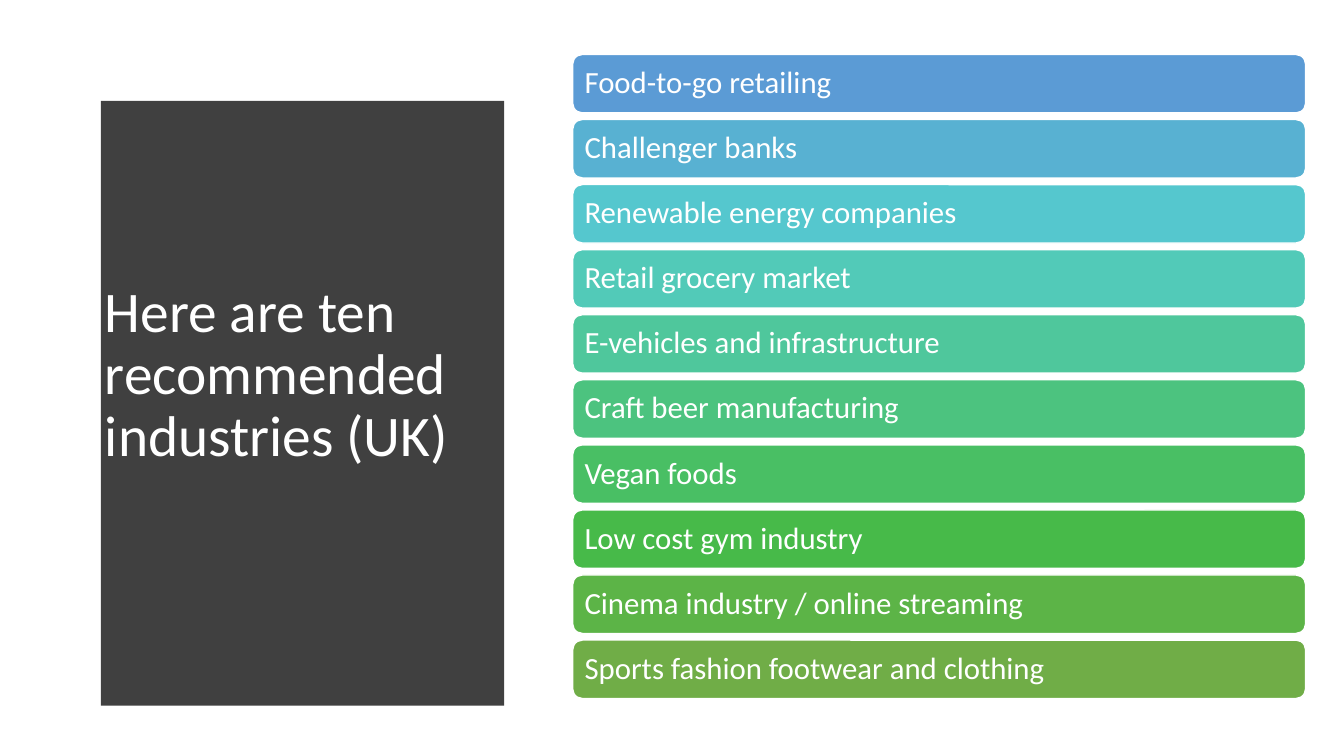
from pptx import Presentation
from pptx.dml.color import RGBColor
from pptx.enum.shapes import MSO_SHAPE
from pptx.enum.text import MSO_ANCHOR, MSO_AUTO_SIZE, PP_ALIGN
from pptx.util import Inches, Pt

FONT = "Calibri"
WHITE = RGBColor(0xFF, 0xFF, 0xFF)
CHARCOAL = RGBColor(0x40, 0x40, 0x40)

INDUSTRIES = [
    ("Food-to-go retailing", RGBColor(0x5B, 0x9B, 0xD5)),
    ("Challenger banks", RGBColor(0x58, 0xB1, 0xD2)),
    ("Renewable energy companies", RGBColor(0x55, 0xC7, 0xCE)),
    ("Retail grocery market", RGBColor(0x52, 0xCA, 0xB8)),
    ("E-vehicles and infrastructure", RGBColor(0x4F, 0xC7, 0x9C)),
    ("Craft beer manufacturing", RGBColor(0x4C, 0xC3, 0x7F)),
    ("Vegan foods", RGBColor(0x49, 0xBF, 0x64)),
    ("Low cost gym industry", RGBColor(0x47, 0xBA, 0x49)),
    ("Cinema industry / online streaming", RGBColor(0x5C, 0xB4, 0x47)),
    ("Sports fashion footwear and clothing", RGBColor(0x70, 0xAD, 0x47)),
]


def format_text(tf, text, size):
    """Left-aligned white text, centred vertically."""
    tf.text = text
    tf.word_wrap = True
    tf.auto_size = MSO_AUTO_SIZE.NONE
    tf.vertical_anchor = MSO_ANCHOR.MIDDLE
    p = tf.paragraphs[0]
    p.alignment = PP_ALIGN.LEFT
    p.line_spacing = 0.9
    font = p.runs[0].font
    font.name, font.size, font.color.rgb = FONT, Pt(size), WHITE


def add_title_panel(slide, left, top, width, height):
    """Dark panel with a bulging right edge, and the title on it."""
    bulge, steps = 0.24, 40
    edge = left + width - bulge
    # The right edge is a parabola, widest at mid-height
    curve = [(edge + bulge * 4 * t * (1 - t), top + height * t)
             for t in (i / steps for i in range(steps + 1))]
    builder = slide.shapes.build_freeform(left, top, scale=Inches(1))
    builder.add_line_segments(curve + [(left, top + height)], close=True)
    panel = builder.convert_to_shape()
    panel.shadow.inherit = False
    panel.fill.solid()
    panel.fill.fore_color.rgb = CHARCOAL
    panel.line.fill.background()

    # Title in front of the panel
    title = slide.shapes.title
    title.element.addprevious(panel.element)
    title.left, title.top = Inches(left + 0.41), Inches(top + 0.59)
    title.width, title.height = Inches(width - 1.05), Inches(height - 1.2)
    format_text(title.text_frame, "Here are ten recommended industries (UK)", 41)


def add_industry_list(slide, left, top, width, height):
    """Evenly spaced rounded bars, one for each industry."""
    bar_height = 0.58
    pitch = (height - bar_height) / (len(INDUSTRIES) - 1)
    group = slide.shapes.add_group_shape()
    for i, (name, color) in enumerate(INDUSTRIES):
        bar = group.shapes.add_shape(
            MSO_SHAPE.ROUNDED_RECTANGLE, Inches(left), Inches(top + i * pitch),
            Inches(width), Inches(bar_height))
        bar.shadow.inherit = False
        bar.fill.solid()
        bar.fill.fore_color.rgb = color
        bar.line.color.rgb = WHITE
        bar.line.width = Pt(1)
        tf = bar.text_frame
        # The rounded corner already adds a small inset
        tf.margin_left = tf.margin_right = Inches(0.09)
        format_text(tf, name, 22)


def main():
    prs = Presentation()
    prs.slide_width, prs.slide_height = Inches(13.33), Inches(7.5)
    slide = prs.slides.add_slide(prs.slide_layouts[5])
    add_title_panel(slide, 0.53, 0.52, 4.79, 6.44)
    add_industry_list(slide, 5.68, 0.54, 7.27, 6.39)
    prs.save("out.pptx")


if __name__ == "__main__":
    main()
